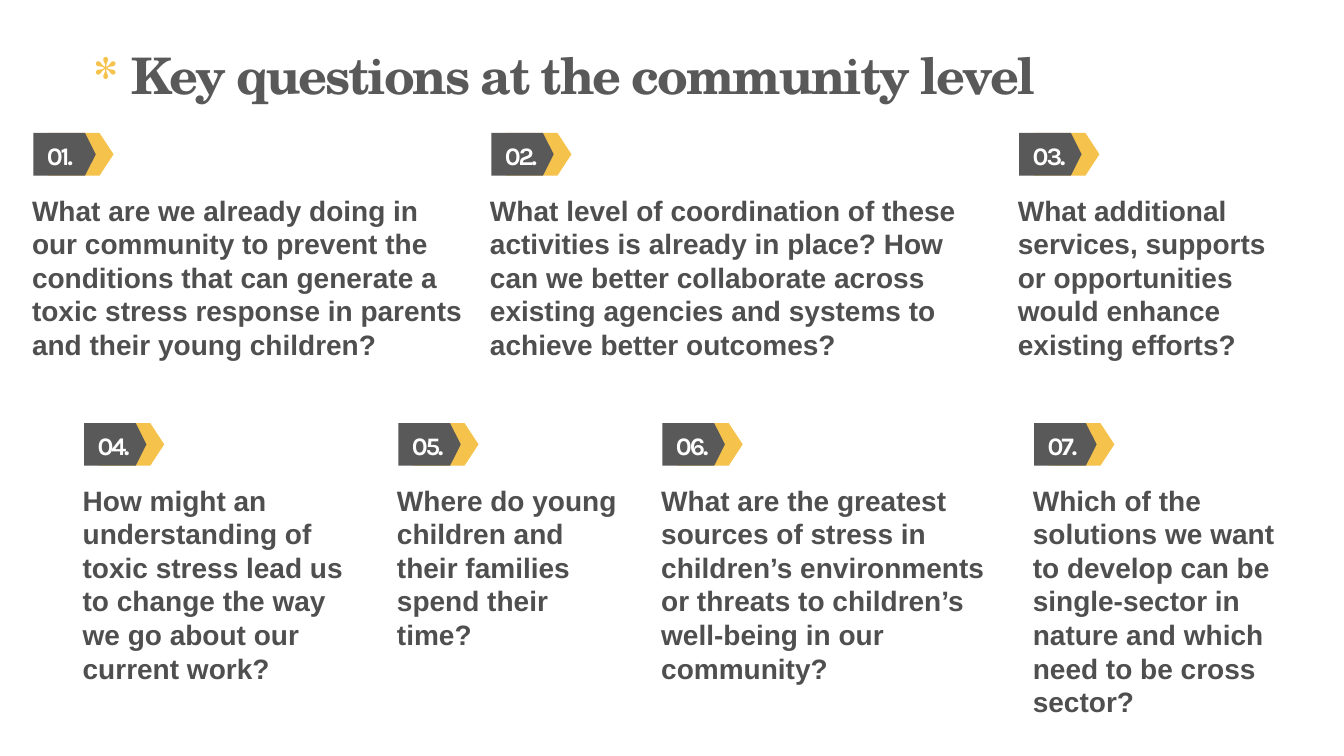
from dataclasses import dataclass

from pptx import Presentation
from pptx.dml.color import RGBColor
from pptx.enum.shapes import MSO_SHAPE
from pptx.enum.text import MSO_AUTO_SIZE
from pptx.shapes.shapetree import GroupShapes
from pptx.text.text import TextFrame
from pptx.util import Pt

GOLD, GREY, BODY_GREY, WHITE = "F5C24C", "595959", "4F4F4F", "FFFFFF"
TOP_ROW, BOTTOM_ROW = 95, 302.2


@dataclass
class Question:
    number: str
    left: float  # left edge of the number badge
    top: float
    width: float  # width of the question text
    lines: int
    text: str


QUESTIONS = [
    Question("01.", 23.8, TOP_ROW, 325.4, 5,
             "What are we already doing in our community to prevent the conditions "
             "that can generate a toxic stress response in parents and their young children?"),
    Question("02.", 350.9, TOP_ROW, 370.8, 5,
             "What level of coordination of these activities is already in place? How can we "
             "better collaborate across existing agencies and systems to achieve better outcomes?"),
    Question("03.", 728, TOP_ROW, 208.8, 5,
             "What additional services, supports or opportunities would enhance existing efforts?"),
    Question("04.", 60, BOTTOM_ROW, 208.8, 6,
             "How might an understanding of toxic stress lead us to change the way "
             "we go about our current work?"),
    Question("05.", 284.5, BOTTOM_ROW, 177.1, 5,
             "Where do young children and their families spend their time?"),
    Question("06.", 473.2, BOTTOM_ROW, 248.4, 6,
             "What are the greatest sources of stress in children’s environments "
             "or threats to children’s well-being in our community?"),
    Question("07.", 738.7, BOTTOM_ROW, 208.8, 7,
             "Which of the solutions we want to develop can be single-sector in nature "
             "and which need to be cross sector?"),
]


def color(hex_code: str) -> RGBColor:
    return RGBColor.from_string(hex_code)


def add_text(frame: TextFrame, text: str, *, font: str, size: float,
             fill: str, spacing: float = 0) -> None:
    """Append a bold run to the first paragraph of the frame."""
    run = frame.paragraphs[0].add_run()
    run.text = text
    run.font.name = font
    run.font.size = Pt(size)
    run.font.bold = True
    run.font.color.rgb = color(fill)
    if spacing:
        run._r.get_or_add_rPr().set("spc", str(round(spacing * 100)))


def add_frame(shapes: GroupShapes, left: float, top: float, width: float,
              height: float, wrap: bool = True) -> TextFrame:
    frame = shapes.add_textbox(Pt(left), Pt(top), Pt(width), Pt(height)).text_frame
    frame.word_wrap = wrap
    return frame


def add_arrow(shapes: GroupShapes, left: float, top: float, width: float,
              point: float, fill: str) -> None:
    arrow = shapes.add_shape(MSO_SHAPE.PENTAGON, Pt(left), Pt(top), Pt(width), Pt(30.5))
    arrow.adjustments[0] = point
    arrow.shadow.inherit = False
    arrow.fill.solid()
    arrow.fill.fore_color.rgb = color(fill)
    arrow.line.fill.background()


def add_question(shapes: GroupShapes, question: Question) -> None:
    left, top = question.left, question.top
    # Number badge
    add_arrow(shapes, left + 10.5, top, 46.8, 0.328, GOLD)
    add_arrow(shapes, left, top, 44.6, 0.251, GREY)
    number = add_frame(shapes, left + 2.6, top + 1.9, 41, 31, wrap=False)
    add_text(number, question.number, font="Karla", size=18, fill=WHITE, spacing=-1.5)
    # Question text
    body = add_frame(shapes, left - 8, top + 39.3, question.width, 7.2 + 24.2 * question.lines)
    body.auto_size = MSO_AUTO_SIZE.SHAPE_TO_FIT_TEXT
    add_text(body, question.text, font="Arial", size=20, fill=BODY_GREY)


def main() -> None:
    deck = Presentation()
    deck.slide_width, deck.slide_height = Pt(960), Pt(540)
    slide = deck.slides.add_slide(deck.slide_layouts[6])

    # Title
    title = add_frame(slide.shapes, 60, 28.1, 877, 47.5)
    for text, fill in (("* ", GOLD), ("Key questions at the community level", GREY)):
        add_text(title, text, font="TeX Gyre Schola", size=36, fill=fill, spacing=-1.5)

    # Numbered questions
    for question in QUESTIONS:
        add_question(slide.shapes.add_group_shape().shapes, question)

    deck.save("out.pptx")


if __name__ == "__main__":
    main()
